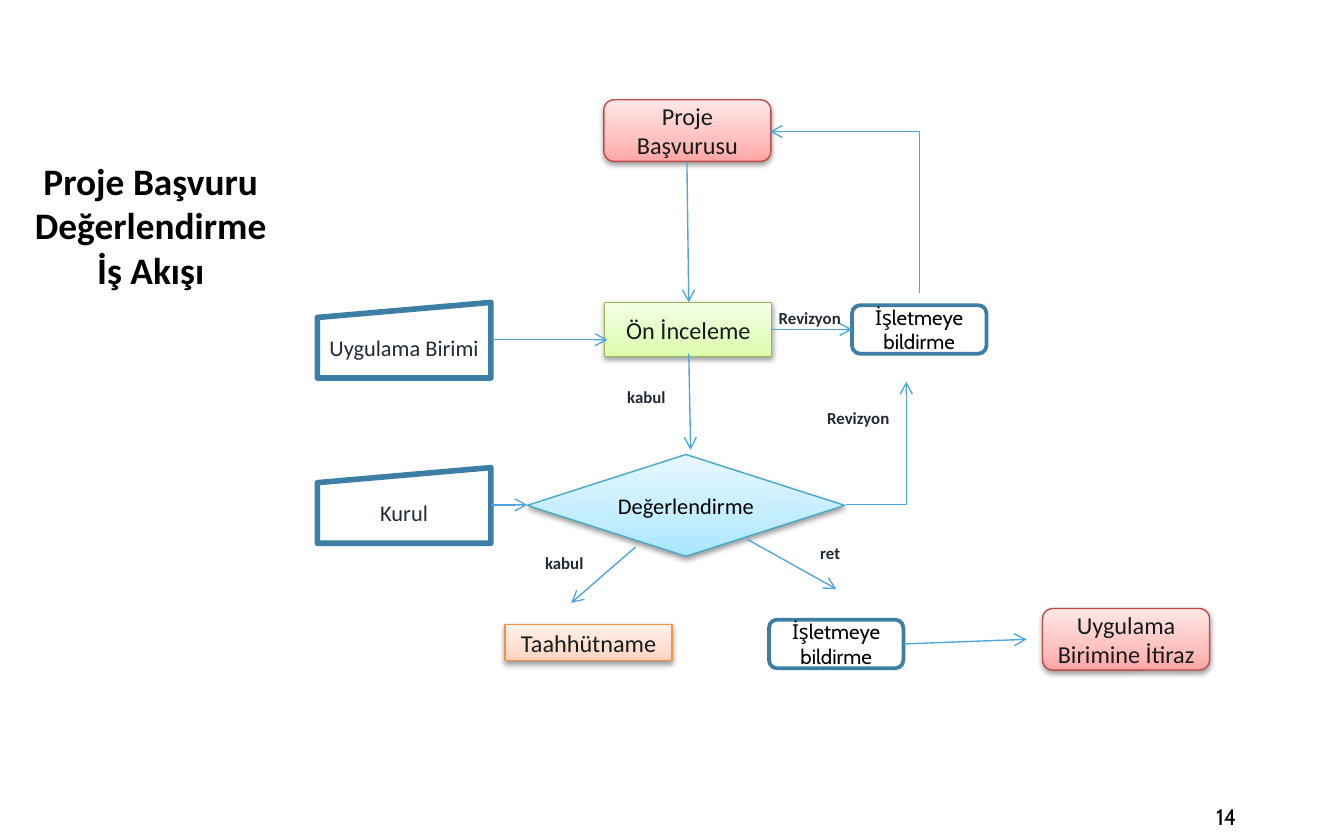
from copy import deepcopy
from dataclasses import dataclass

from pptx import Presentation
from pptx.dml.color import RGBColor
from pptx.enum.shapes import MSO_CONNECTOR, MSO_SHAPE
from pptx.enum.text import MSO_ANCHOR, PP_ALIGN
from pptx.oxml.ns import qn
from pptx.util import Pt
from lxml import etree

ROUNDED = MSO_SHAPE.ROUNDED_RECTANGLE
RECT = MSO_SHAPE.RECTANGLE
DECISION = MSO_SHAPE.FLOWCHART_DECISION
MANUAL_INPUT = MSO_SHAPE.FLOWCHART_MANUAL_INPUT
STRAIGHT, ELBOW = MSO_CONNECTOR.STRAIGHT, MSO_CONNECTOR.ELBOW
TOP, MIDDLE = MSO_ANCHOR.TOP, MSO_ANCHOR.MIDDLE
CENTER, RIGHT = PP_ALIGN.CENTER, PP_ALIGN.RIGHT


@dataclass(frozen=True)
class Theme:
    font: str = "Calibri"
    alt_font: str = "Cabin"
    black: str = "000000"
    white: str = "FFFFFF"
    dark: str = "161C1C"
    slate: str = "222A34"
    frame: str = "3D7EA5"
    arrow: str = "4DA7DE"
    red: tuple = ("BF4C48", "FFA6A5", "FFC0BF", "FFE7E7")
    green: tuple = ("98B955", "DAFDA7", "E4FCC2", "F5FFE7")
    blue: tuple = ("46AAC5", "A7E6FF", "C1EDFF", "E7F8FF")
    orange: tuple = ("F69240", "FFD2BD", "FFDED0", "FFF2ED")
    title: float = 20
    step: float = 13
    body: float = 12
    notice: float = 11
    label: float = 9


T = Theme()


def rgb(value):
    return RGBColor.from_string(value)


def write(shape, text, size, color, font=T.font, bold=False, align=CENTER,
          anchor=MIDDLE, inset=(5.9, 3), wrap=True):
    tf = shape.text_frame
    tf.text = text
    tf.word_wrap = wrap
    tf.vertical_anchor = anchor
    tf.margin_left = tf.margin_right = Pt(inset[0])
    tf.margin_top = tf.margin_bottom = Pt(inset[1])
    for p in tf.paragraphs:
        p.alignment = align
        for r in p.runs:
            r.font.name = font
            r.font.size = Pt(size)
            r.font.bold = bold
            r.font.color.rgb = rgb(color)


def add_box(s, kind, box, line, width):
    sp = s.shapes.add_shape(kind, *map(Pt, box))
    sp.line.color.rgb = rgb(line)
    sp.line.width = Pt(width)
    sp.shadow.inherit = False
    return sp


def add_shadow(sp):
    effects = sp.element.spPr.find(qn("a:effectLst"))
    shadow = etree.SubElement(effects, qn("a:outerShdw"), blurRad=str(Pt(3.1)),
                              dist=str(Pt(1.6)), dir="5400000", rotWithShape="0")
    color = etree.SubElement(shadow, qn("a:srgbClr"), val=T.black)
    etree.SubElement(color, qn("a:alpha"), val="38000")


def add_step(s, kind, box, text, palette, size=T.step, color=T.dark):
    line, *stops = palette
    sp = add_box(s, kind, box, line, 0.75)
    sp.fill.gradient()
    sp.fill.gradient_angle = 90
    gs_list = sp.element.spPr.find(qn("a:gradFill")).find(qn("a:gsLst"))
    gs_list.append(deepcopy(gs_list[0]))
    for stop, position, value in zip(sp.fill.gradient_stops, (0, 0.35, 1), stops):
        stop.position = position
        stop.color.rgb = rgb(value)
    add_shadow(sp)
    write(sp, text, size, color)


def add_actor(s, left, top, text):
    sp = add_box(s, MANUAL_INPUT, (left, top, 93, 40.5), T.frame, 3)
    sp.fill.background()
    write(sp, text, T.body, T.slate)


def add_notice(s, left, top):
    sp = add_box(s, ROUNDED, (left, top, 72, 26), T.frame, 2)
    sp.fill.solid()
    sp.fill.fore_color.rgb = rgb(T.white)
    write(sp, "İşletmeye bildirme", T.notice, T.black, T.alt_font, inset=(7.2, 3.6))


def add_label(s, left, top, text):
    sp = s.shapes.add_textbox(*map(Pt, (left, top, 45.5, 16.5)))
    write(sp, text, T.label, T.slate, bold=True, anchor=TOP, wrap=False)


def add_arrow(s, points, kind=STRAIGHT, end="a:tailEnd"):
    cx = s.shapes.add_connector(kind, *map(Pt, points))
    cx.line.color.rgb = rgb(T.arrow)
    cx.line.width = Pt(0.75)
    spPr = cx.element.spPr
    if kind == ELBOW:
        spPr.find(qn("a:prstGeom")).set("prst", "bentConnector2")
    etree.SubElement(spPr.find(qn("a:ln")), qn(end), type="arrow")
    etree.SubElement(spPr, qn("a:effectLst"))


def add_title(s):
    sp = s.shapes.title
    sp.left, sp.top, sp.width, sp.height = map(Pt, (-8.5, 81.5, 178.5, 78.5))
    write(sp, "Proje Başvuru Değerlendirme\nİş Akışı", T.title, T.black,
          bold=True, anchor=TOP)


def add_page_number(s):
    sp = s.shapes.add_textbox(*map(Pt, (502, 425.5, 167.5, 24)))
    write(sp, "14", T.body, T.black, T.alt_font, align=RIGHT, inset=(7.2, 3.6))


def main():
    prs = Presentation()
    prs.slide_width, prs.slide_height = Pt(720), Pt(450)
    s = prs.slides.add_slide(prs.slide_layouts[5])
    add_title(s)

    add_step(s, ROUNDED, (323.5, 53.5, 89.5, 33), "Proje\nBaşvurusu", T.red)
    add_step(s, RECT, (324, 162, 89.5, 29), "Ön İnceleme", T.green)
    add_step(s, DECISION, (282.5, 243.5, 170, 54.5), "Değerlendirme", T.blue,
             T.body, T.black)
    add_step(s, RECT, (270.5, 334.5, 89.5, 19.5), "Taahhütname", T.orange)
    add_step(s, ROUNDED, (558.5, 326, 89.5, 33), "Uygulama Birimine İtiraz", T.red)

    add_actor(s, 170, 162, "Uygulama Birimi")
    add_actor(s, 170, 250.5, "Kurul")
    add_notice(s, 456.5, 163.5)
    add_notice(s, 412, 332)

    for points in (
        (368, 87, 369, 162),
        (369, 189.5, 370, 241),
        (340.5, 293, 306, 323),
        (400.5, 289, 448, 315.5),
        (263, 182, 325.5, 182),
        (263, 270.5, 282.5, 270.5),
        (413.5, 176.5, 456.5, 176.5),
        (484, 345, 550, 342.5),
    ):
        add_arrow(s, points)
    add_arrow(s, (412.5, 70.5, 492.5, 157), ELBOW, "a:headEnd")
    add_arrow(s, (453, 270.5, 485.5, 204.5), ELBOW)

    for left, top, text in (
        (323.5, 204, "kabul"),
        (279.5, 293, "kabul"),
        (422, 288, "ret"),
        (411, 162, "Revizyon"),
        (437, 215.5, "Revizyon"),
    ):
        add_label(s, left, top, text)
    add_page_number(s)
    prs.save("out.pptx")


if __name__ == "__main__":
    main()
